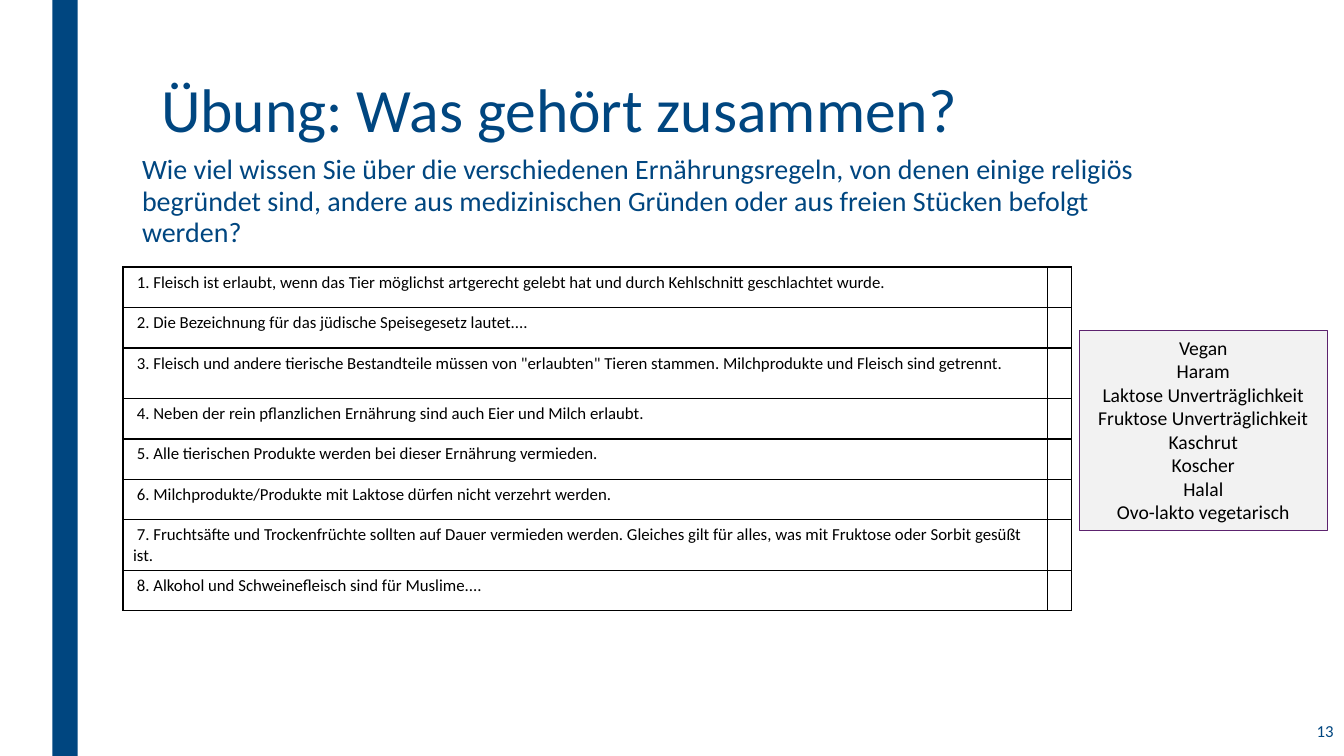
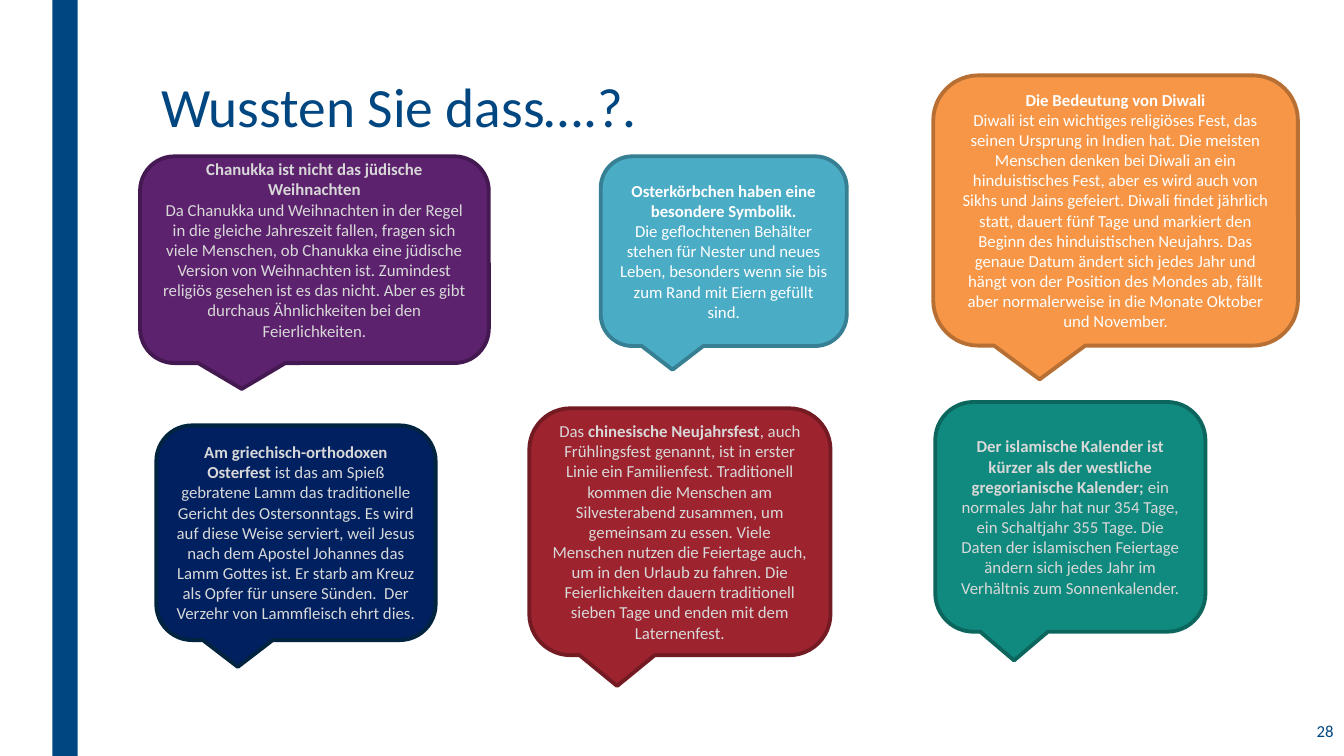
"""Build two slides about dietary rules and religious holidays."""
from lxml import etree
from pptx import Presentation
from pptx.dml.color import RGBColor
from pptx.enum.shapes import MSO_SHAPE
from pptx.enum.text import MSO_ANCHOR, MSO_AUTO_SIZE, PP_ALIGN
from pptx.oxml.ns import qn
from pptx.util import Cm, Pt

RECT = MSO_SHAPE.RECTANGLE
BUBBLE = MSO_SHAPE.ROUNDED_RECTANGULAR_CALLOUT
TOP, MIDDLE = MSO_ANCHOR.TOP, MSO_ANCHOR.MIDDLE
LEFT, CENTER, RIGHT = PP_ALIGN.LEFT, PP_ALIGN.CENTER, PP_ALIGN.RIGHT
FIT = MSO_AUTO_SIZE.SHAPE_TO_FIT_TEXT

FONT = "Calibri"
BLUE = RGBColor(0x00, 0x46, 0x80)
BLACK = RGBColor(0x00, 0x00, 0x00)
WHITE = RGBColor(0xFF, 0xFF, 0xFF)
PALE = RGBColor(0xF2, 0xF2, 0xF2)
SILVER = RGBColor(0xD8, 0xD8, 0xD8)
PURPLE = RGBColor(0x5C, 0x22, 0x6E)
PLUM = RGBColor(0x44, 0x19, 0x51)
ORANGE = RGBColor(0xF7, 0x96, 0x46)
BROWN = RGBColor(0xB7, 0x6F, 0x34)
AQUA = RGBColor(0x4B, 0xAC, 0xC6)
STEEL = RGBColor(0x37, 0x7F, 0x92)
RED = RGBColor(0x9D, 0x23, 0x2F)
WINE = RGBColor(0x74, 0x1A, 0x23)
GREEN = RGBColor(0x10, 0x8A, 0x7E)
PINE = RGBColor(0x0C, 0x66, 0x5D)
NAVY = RGBColor(0x00, 0x20, 0x60)
INK = RGBColor(0x00, 0x23, 0x40)

WIDTH, HEIGHT = 33.87, 19.05
ROW, TALL = 1.02, 1.27

RULES = [
    " 1. Fleisch ist erlaubt, wenn das Tier möglichst artgerecht gelebt hat und durch Kehlschnitt geschlachtet wurde.",
    " 2. Die Bezeichnung für das jüdische Speisegesetz lautet....",
    " 3. Fleisch und andere tierische Bestandteile müssen von \"erlaubten\" Tieren stammen. "
    "Milchprodukte und Fleisch sind getrennt.",
    " 4. Neben der rein pflanzlichen Ernährung sind auch Eier und Milch erlaubt.",
    " 5. Alle tierischen Produkte werden bei dieser Ernährung vermieden.",
    " 6. Milchprodukte/Produkte mit Laktose dürfen nicht verzehrt werden.",
    " 7. Fruchtsäfte und Trockenfrüchte sollten auf Dauer vermieden werden. "
    "Gleiches gilt für alles, was mit Fruktose oder Sorbit gesüßt ist.",
    " 8. Alkohol und Schweinefleisch sind für Muslime....",
]

DIETS = ["Vegan", "Haram", "Laktose Unverträglichkeit", "Fruktose Unverträglichkeit",
         "Kaschrut", "Koscher", "Halal", "Ovo-lakto vegetarisch"]

FACTS = [
    ((3.53, 3.94, 8.79, 5.21), PURPLE, PLUM, SILVER, 0.63, [
        "*Chanukka ist nicht das jüdische Weihnachten*",
        "Da Chanukka und Weihnachten in der Regel in die gleiche Jahreszeit fallen, fragen sich "
        "viele Menschen, ob Chanukka eine jüdische Version von Weihnachten ist. Zumindest "
        "religiös gesehen ist es das nicht. Aber es gibt durchaus Ähnlichkeiten bei den "
        "Feierlichkeiten."]),
    ((23.52, 1.9, 9.19, 6.81), ORANGE, BROWN, WHITE, 0.13, [
        "*Die Bedeutung von Diwali*",
        "Diwali ist ein wichtiges religiöses Fest, das seinen Ursprung in Indien hat. Die meisten "
        "Menschen denken bei Diwali an ein hinduistisches Fest, aber es wird auch von Sikhs und "
        "Jains gefeiert. Diwali findet jährlich statt, dauert fünf Tage und markiert den Beginn "
        "des hinduistischen Neujahrs. Das genaue Datum ändert sich jedes Jahr und hängt von der "
        "Position des Mondes ab, fällt aber normalerweise in die Monate Oktober und November."]),
    ((15.14, 3.94, 6.2, 4.78), AQUA, STEEL, WHITE, 0.13, [
        "*Osterkörbchen haben eine besondere Symbolik.*",
        "Die geflochtenen Behälter stehen für Nester und neues Leben, besonders wenn sie bis zum "
        "Rand mit Eiern gefüllt sind."]),
    ((13.34, 10.29, 7.59, 6.22), RED, WINE, SILVER, 0.13, [
        "Das *chinesische Neujahrsfest*, auch Frühlingsfest genannt, ist in erster Linie ein "
        "Familienfest. Traditionell kommen die Menschen am Silvesterabend zusammen, um gemeinsam "
        "zu essen. Viele Menschen nutzen die Feiertage auch, um in den Urlaub zu fahren. Die "
        "Feierlichkeiten dauern traditionell sieben Tage und enden mit dem Laternenfest."]),
    ((23.57, 10.13, 6.81, 5.79), GREEN, PINE, SILVER, 0.13, [
        "*Der islamische Kalender ist kürzer als der westliche gregorianische Kalender; *ein "
        "normales Jahr hat nur 354 Tage, ein Schaltjahr 355 Tage. Die Daten der islamischen "
        "Feiertage ändern sich jedes Jahr im Verhältnis zum Sonnenkalender."]),
    ((3.94, 10.72, 7.04, 5.41), NAVY, INK, SILVER, 0.13, [
        "*Am griechisch-orthodoxen Osterfest *ist das am Spieß gebratene Lamm das traditionelle "
        "Gericht des Ostersonntags. Es wird auf diese Weise serviert, weil Jesus nach dem Apostel "
        "Johannes das Lamm Gottes ist. Er starb am Kreuz als Opfer für unsere Sünden.  Der "
        "Verzehr von Lammfleisch ehrt dies."]),
]


class Deck:
    """Hold the presentation style and the current slide."""

    def __init__(self):
        self.file = Presentation()
        self.file.slide_width, self.file.slide_height = Cm(WIDTH), Cm(HEIGHT)

    def page(self, title, size, number):
        """Start a slide with band, title and number."""
        self.slide = self.file.slides.add_slide(self.file.slide_layouts[6])
        self.shape(RECT, (1.32, 0, 0.64, HEIGHT), BLUE)
        self.text((3.81, 1.9, 26.67, 1.83), title, size, space=0.89)
        self.text((29.41, 17.86, 4.45, 1.12), number, 12, RIGHT, MIDDLE)

    def put(self, frame, lines, size, color, align=LEFT):
        """Fill a frame with lines; asterisks enclose bold words."""
        frame.word_wrap = True
        for i, line in enumerate(lines):
            para = frame.add_paragraph() if i else frame.paragraphs[0]
            para.alignment = align
            for j, part in enumerate(line.split("*")):
                if part:
                    run = para.add_run()
                    run.text = part
                    font = run.font
                    font.name, font.size, font.bold = FONT, Pt(size), j % 2 == 1
                    font.color.rgb = color

    def text(self, area, words, size, align=LEFT, anchor=TOP, space=None):
        """Add a blue text box."""
        frame = self.slide.shapes.add_textbox(*map(Cm, area)).text_frame
        self.put(frame, [words], size, BLUE, align)
        frame.vertical_anchor = anchor
        frame.paragraphs[0].line_spacing = space

    def shape(self, kind, area, fill, edge=None, width=0.75):
        """Add a filled shape, outlined if an edge colour is given."""
        shape = self.slide.shapes.add_shape(kind, *map(Cm, area))
        shape.shadow.inherit = False
        shape.fill.solid()
        shape.fill.fore_color.rgb = fill
        if edge is None:
            shape.line.fill.background()
        else:
            shape.line.color.rgb = edge
            shape.line.width = Pt(width)
        return shape

    def panel(self, area, lines):
        """Add a pale box with a centred word list."""
        frame = self.shape(RECT, area, PALE, PURPLE).text_frame
        self.put(frame, lines, 14, BLACK, CENTER)
        frame.vertical_anchor = TOP
        frame.auto_size = FIT

    def bubble(self, area, fill, edge, color, foot, lines):
        """Add a speech bubble."""
        frame = self.shape(BUBBLE, area, fill, edge, 2.75).text_frame
        self.put(frame, lines, 12, color, CENTER)
        frame.vertical_anchor = MIDDLE
        frame.margin_bottom = Cm(foot)

    def border(self, cell):
        """Draw a thin black line on all sides of a cell."""
        props = cell._tc.get_or_add_tcPr()
        for side in ("a:lnL", "a:lnR", "a:lnT", "a:lnB"):
            line = etree.SubElement(props, qn(side), w=str(Pt(1)))
            fill = etree.SubElement(line, qn("a:solidFill"))
            etree.SubElement(fill, qn("a:srgbClr"), val=str(BLACK))

    def table(self, left, top, widths, heights, lines):
        """Add a ruled table with text in its first column."""
        area = (left, top, sum(widths), sum(heights))
        table = self.slide.shapes.add_table(
            len(heights), len(widths), *map(Cm, area)).table
        table.first_row = table.horz_banding = False
        for col, width in zip(table.columns, widths):
            col.width = Cm(width)
        for row, height, line in zip(table.rows, heights, lines):
            row.height = Cm(height)
            for cell in row.cells:
                self.border(cell)
                cell.fill.background()
            self.put(row.cells[0].text_frame, [line], 12, BLACK)


def main():
    """Build and save both slides."""
    deck = Deck()
    deck.page("Übung: Was gehört zusammen?", 44, "13")
    deck.text((3.33, 3.76, 26.67, 2.8),
              "Wie viel wissen Sie über die verschiedenen Ernährungsregeln, von denen einige "
              "religiös begründet sind, andere aus medizinischen Gründen oder aus freien Stücken "
              "befolgt werden?", 20, space=0.94)
    heights = [TALL if i == 2 else ROW for i in range(len(RULES))]
    deck.table(3.1, 6.73, (23.29, 0.61), heights, RULES)
    deck.panel((27.2, 8.33, 6.25, 5.05), DIETS)

    deck.page("Wussten Sie dass….?.", 39.6, "28")
    for fact in FACTS:
        deck.bubble(*fact)
    deck.file.save("out.pptx")


if __name__ == "__main__":
    main()
